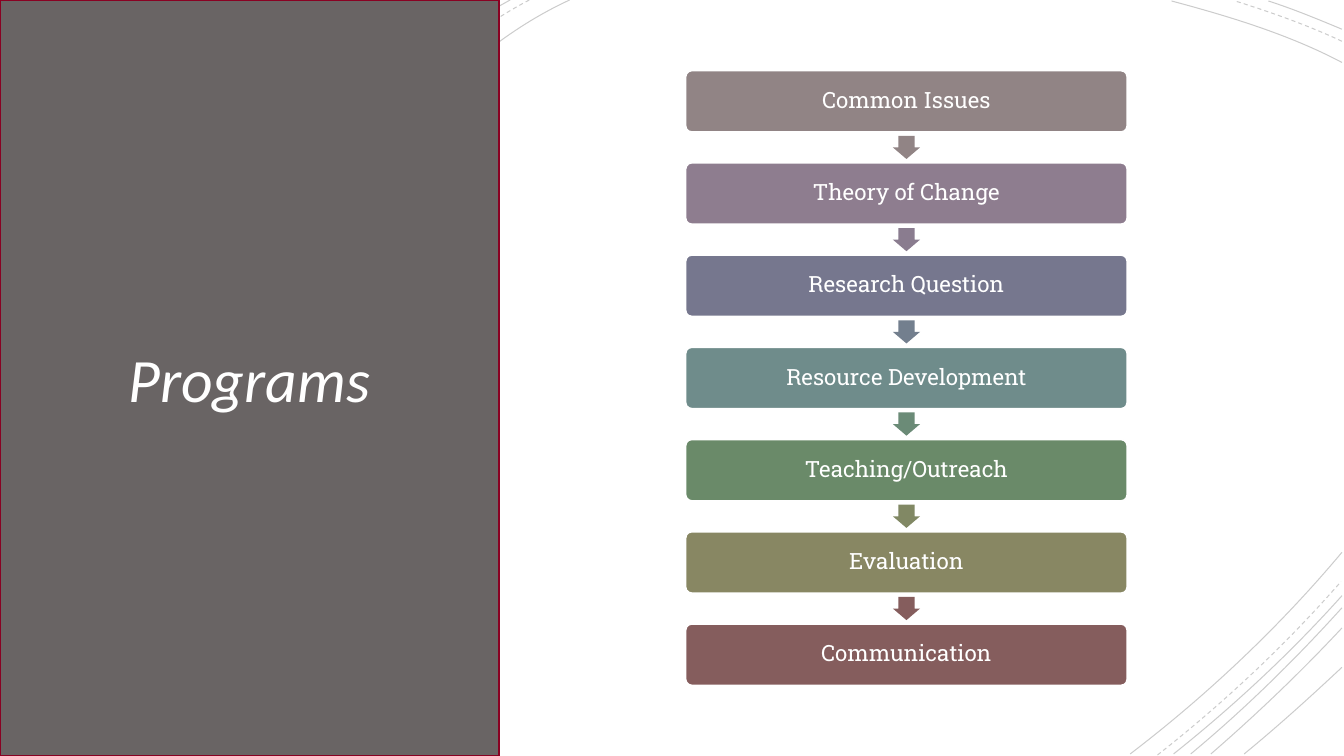
from dataclasses import dataclass

from lxml.etree import SubElement
from pptx import Presentation
from pptx.dml.color import RGBColor
from pptx.enum.dml import MSO_LINE
from pptx.enum.shapes import MSO_SHAPE
from pptx.enum.text import MSO_ANCHOR, MSO_AUTO_SIZE, PP_ALIGN
from pptx.oxml.ns import qn
from pptx.shapes.autoshape import Shape
from pptx.shapes.shapetree import SlideShapes
from pptx.util import Inches, Pt

WHITE = RGBColor(0xFF, 0xFF, 0xFF)
BLACK = RGBColor(0x00, 0x00, 0x00)
PANEL_GREY = RGBColor(0x69, 0x64, 0x64)
PANEL_EDGE = RGBColor(0x89, 0x01, 0x22)
TAUPE = RGBColor(0x91, 0x84, 0x85)
MAUVE = RGBColor(0x8E, 0x7D, 0x8F)
MAUVE_ARROW = RGBColor(0x8A, 0x7C, 0x8F)
SLATE = RGBColor(0x76, 0x77, 0x8E)
SLATE_ARROW = RGBColor(0x73, 0x7F, 0x8E)
TEAL = RGBColor(0x6F, 0x8C, 0x8B)
TEAL_ARROW = RGBColor(0x6B, 0x8B, 0x77)
GREEN = RGBColor(0x6A, 0x8A, 0x69)
GREEN_ARROW = RGBColor(0x81, 0x88, 0x64)
OLIVE = RGBColor(0x88, 0x87, 0x63)
BRICK = RGBColor(0x85, 0x5D, 0x5D)

STEP_LEFT, STEP_TOP, STEP_WIDTH, STEP_HEIGHT = 6.8, 0.7, 4.38, 0.61
STEP_PITCH = 0.915
ARROW_LENGTH, ARROW_BREADTH = 0.23, 0.27

Point = tuple[float, float]


@dataclass(frozen=True)
class Step:
    label: str
    color: RGBColor
    arrow_color: RGBColor | None = None


@dataclass(frozen=True)
class Arc:
    """A cubic Bezier curve, in inches."""
    start: Point
    control1: Point
    control2: Point
    end: Point
    dashed: bool = False

    def point(self, t: float) -> Point:
        weights = ((1 - t) ** 3, 3 * t * (1 - t) ** 2, 3 * t * t * (1 - t), t ** 3)
        corners = (self.start, self.control1, self.control2, self.end)
        return (sum(w * x for w, (x, _) in zip(weights, corners)),
                sum(w * y for w, (_, y) in zip(weights, corners)))

    def leftmost(self) -> Point:
        return min(self.point(i / 100) for i in range(101))


STEPS = [
    Step("Common Issues", TAUPE, TAUPE),
    Step("Theory of Change", MAUVE, MAUVE_ARROW),
    Step("Research Question", SLATE, SLATE_ARROW),
    Step("Resource Development", TEAL, TEAL_ARROW),
    Step("Teaching/Outreach", GREEN, GREEN_ARROW),
    Step("Evaluation", OLIVE, BRICK),
    Step("Communication", BRICK),
]

ARCS = [
    # Top left, running behind the title panel
    Arc((5.65, 0), (3.15, 1.15), (1.43, 5.4), (3.69, 7.48)),
    Arc((5.25, 0), (2.85, 1.25), (1.23, 5.37), (3.36, 7.48), dashed=True),
    Arc((5.06, 0), (2.7, 1.27), (1.1, 5.37), (3.19, 7.48)),
    # Top right
    Arc((13.31, 0.62), (12.78, 0.34), (12.18, 0.16), (11.62, 0.01)),
    Arc((13.31, 0.41), (12.97, 0.25), (12.6, 0.12), (12.25, 0.01), dashed=True),
    Arc((13.31, 0.29), (13.07, 0.19), (12.83, 0.09), (12.58, 0.01)),
    # Bottom right
    Arc((11.21, 7.48), (11.97, 6.9), (12.69, 6.22), (13.31, 5.48)),
    Arc((11.48, 7.49), (12.13, 6.98), (12.75, 6.4), (13.3, 5.77), dashed=True),
    Arc((11.64, 7.48), (12.23, 7.01), (12.8, 6.48), (13.31, 5.91)),
    Arc((11.81, 7.48), (12.34, 7.04), (12.84, 6.55), (13.31, 6.03)),
    Arc((12.01, 7.48), (12.46, 7.09), (12.9, 6.67), (13.31, 6.23)),
    Arc((12.34, 7.48), (12.67, 7.21), (12.99, 6.92), (13.31, 6.62)),
]


def paint(shape: Shape, fill: RGBColor, edge: RGBColor | None = None) -> None:
    shape.fill.solid()
    shape.fill.fore_color.rgb = fill
    if edge is None:
        shape.line.fill.background()
    else:
        shape.line.color.rgb = edge
        shape.line.width = Pt(1.25)
    shape.shadow.inherit = False


def write(shape: Shape, text: str, *, font: str, size: float, italic: bool = False,
          line_spacing: float = 1.0, inset: float = 0.1) -> None:
    frame = shape.text_frame
    frame.text = text
    frame.word_wrap = True
    frame.auto_size = MSO_AUTO_SIZE.NONE
    frame.vertical_anchor = MSO_ANCHOR.MIDDLE
    frame.margin_left = frame.margin_right = Inches(inset)
    frame.margin_top = frame.margin_bottom = Inches(inset)
    paragraph = frame.paragraphs[0]
    paragraph.alignment = PP_ALIGN.CENTER
    paragraph.line_spacing = line_spacing
    run_font = paragraph.runs[0].font
    run_font.name = font
    run_font.size = Pt(size)
    run_font.italic = italic
    run_font.color.rgb = WHITE


def draw_arc(shapes: SlideShapes, arc: Arc) -> None:
    # Straight segments through the extreme points set the frame
    start, leftmost, end = [tuple(Inches(v) for v in point)
                            for point in (arc.start, arc.leftmost(), arc.end)]
    builder = shapes.build_freeform(*start)
    builder.add_line_segments([leftmost, end], close=False)
    curve = builder.convert_to_shape()
    # One Bezier segment takes their place
    outline = next(curve.element.iter(qn("a:path")))
    for segment in outline.findall(qn("a:lnTo")):
        outline.remove(segment)
    bezier = SubElement(outline, qn("a:cubicBezTo"))
    for x, y in (arc.control1, arc.control2, arc.end):
        SubElement(bezier, qn("a:pt"), x=str(Inches(x) - curve.left),
                   y=str(Inches(y) - curve.top))
    curve.shadow.inherit = False
    curve.fill.background()
    curve.line.color.rgb = BLACK
    curve.line.width = Pt(0.75)
    if arc.dashed:
        curve.line.dash_style = MSO_LINE.DASH
    # 20 % opacity
    line_color = next(curve.element.iter(qn("a:srgbClr")))
    SubElement(line_color, qn("a:alpha"), val="20000")


def draw_step(shapes: SlideShapes, step: Step, top: float) -> None:
    box = shapes.add_shape(MSO_SHAPE.ROUNDED_RECTANGLE, Inches(STEP_LEFT), Inches(top),
                           Inches(STEP_WIDTH), Inches(STEP_HEIGHT))
    box.adjustments[0] = 0.1
    paint(box, step.color, WHITE)
    write(box, step.label, font="Roboto Slab", size=16, line_spacing=0.9, inset=0.07)
    if step.arrow_color is None:
        return
    # The arrow sits in the middle of the gap below the box
    center_x = STEP_LEFT + STEP_WIDTH / 2
    center_y = top + (STEP_HEIGHT + STEP_PITCH) / 2
    arrow = shapes.add_shape(MSO_SHAPE.RIGHT_ARROW, Inches(center_x - ARROW_LENGTH / 2),
                             Inches(center_y - ARROW_BREADTH / 2),
                             Inches(ARROW_LENGTH), Inches(ARROW_BREADTH))
    arrow.rotation = 90
    arrow.adjustments[0] = 0.6
    arrow.adjustments[1] = 0.5
    paint(arrow, step.arrow_color)


def main() -> None:
    deck = Presentation()
    deck.slide_width, deck.slide_height = Inches(13.33), Inches(7.5)
    slide = deck.slides.add_slide(deck.slide_layouts[5])
    shapes = slide.shapes

    # Background curves
    for arc in ARCS:
        draw_arc(shapes, arc)

    # Title panel, brought in front of the curves
    title = shapes.title
    title.left, title.top = Inches(0), Inches(0)
    title.width, title.height = Inches(4.95), Inches(7.5)
    title.element.getparent().append(title.element)
    write(title, "Programs", font="Calibri", size=44, italic=True)
    title.fill.solid()
    title.fill.fore_color.rgb = PANEL_GREY
    title.line.color.rgb = PANEL_EDGE
    title.line.width = Pt(1.25)

    # Chain of program steps
    for index, step in enumerate(STEPS):
        draw_step(shapes, step, STEP_TOP + index * STEP_PITCH)

    deck.save("out.pptx")


if __name__ == "__main__":
    main()
